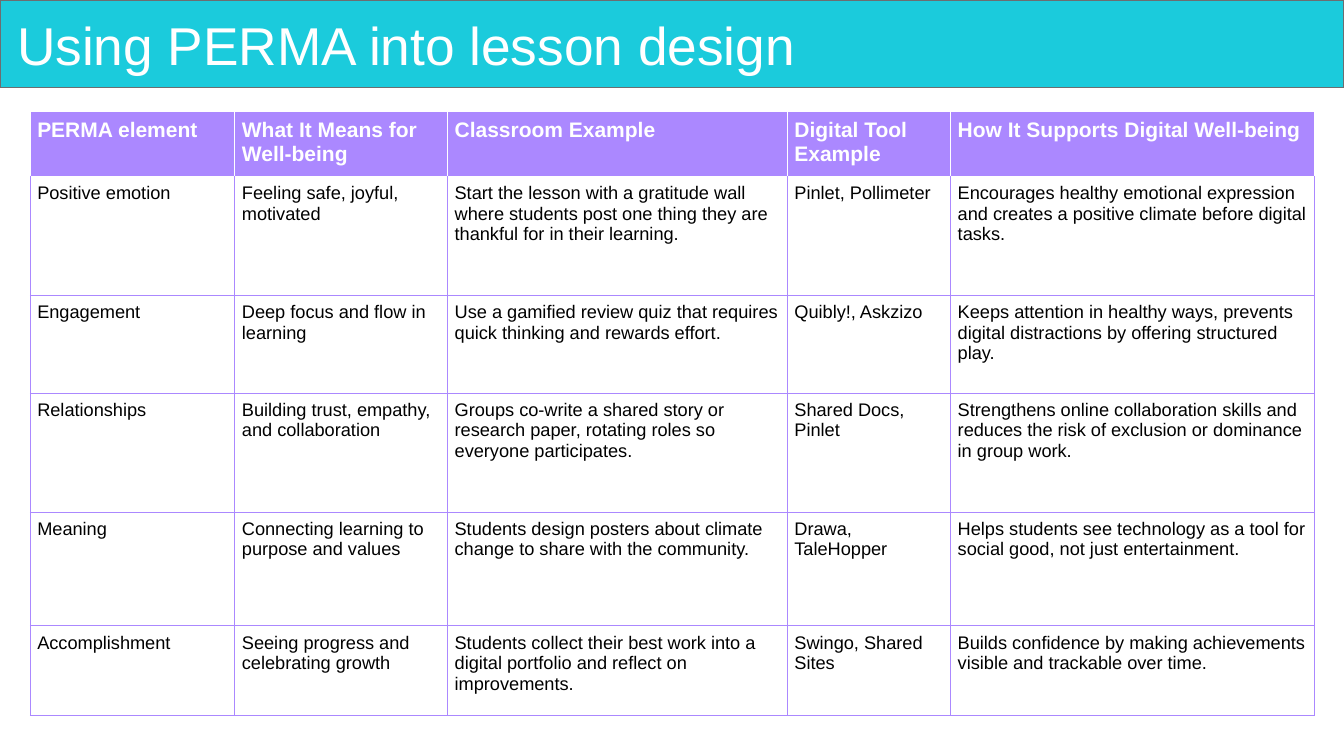
import lxml.etree
import pptx
import pptx.dml.color
import pptx.enum.shapes
import pptx.enum.text
import pptx.oxml.ns
import pptx.util

Inches = pptx.util.Inches
FONT = "Arial"
TEAL, GREY, PURPLE, WHITE, BLACK = "1BCBDC", "6C6E70", "AB88FF", "FFFFFF", "000000"

COLUMN_WIDTHS = [2.03, 2.11, 3.37, 1.62, 3.61]
ROW_HEIGHTS = [0.51, 1.18, 0.97, 1.18, 1.13, 0.89]
PERMA_ROWS = [
    ["PERMA element", "What It Means for Well-being", "Classroom Example",
     "Digital Tool Example", "How It Supports Digital Well-being"],
    ["Positive emotion", "Feeling safe, joyful, motivated",
     "Start the lesson with a gratitude wall where students post one thing "
     "they are thankful for in their learning.",
     "Pinlet, Pollimeter",
     "Encourages healthy emotional expression and creates a positive climate "
     "before digital tasks."],
    ["Engagement", "Deep focus and flow in learning",
     "Use a gamified review quiz that requires quick thinking and rewards effort.",
     "Quibly!, Askzizo",
     "Keeps attention in healthy ways, prevents digital distractions by "
     "offering structured play."],
    ["Relationships", "Building trust, empathy, and collaboration",
     "Groups co-write a shared story or research paper, rotating roles so "
     "everyone participates.",
     "Shared Docs, Pinlet",
     "Strengthens online collaboration skills and reduces the risk of "
     "exclusion or dominance in group work."],
    ["Meaning", "Connecting learning to purpose and values",
     "Students design posters about climate change to share with the community.",
     "Drawa, TaleHopper",
     "Helps students see technology as a tool for social good, not just "
     "entertainment."],
    ["Accomplishment", "Seeing progress and celebrating growth",
     "Students collect their best work into a digital portfolio and reflect "
     "on improvements.",
     "Swingo, Shared Sites",
     "Builds confidence by making achievements visible and trackable over time."],
]


def rgb(hex_colour):
    return pptx.dml.color.RGBColor.from_string(hex_colour)


def add_run(paragraph, text, size, colour, bold=False):
    run = paragraph.add_run()
    run.text = text
    run.font.name = FONT
    run.font.size = pptx.util.Pt(size)
    run.font.bold = bold
    run.font.color.rgb = rgb(colour)


def set_margins(target, inches):
    """Give a cell or text frame the same margin on all sides."""
    target.margin_left = target.margin_right = Inches(inches)
    target.margin_top = target.margin_bottom = Inches(inches)


def set_borders(cell, **colours):
    """Draw 0.75 pt borders; call before filling, as lines precede the fill."""
    qn = pptx.oxml.ns.qn
    properties = cell._tc.get_or_add_tcPr()
    for side in "LRTB":
        line = lxml.etree.SubElement(properties, qn(f"a:ln{side}"),
                                     w=str(pptx.util.Pt(0.75)))
        solid = lxml.etree.SubElement(line, qn("a:solidFill"))
        lxml.etree.SubElement(solid, qn("a:srgbClr"), val=colours.get(side, PURPLE))


def add_title_band(slide, left, top, width, height):
    band = slide.shapes.add_shape(
        pptx.enum.shapes.MSO_SHAPE.RECTANGLE,
        Inches(left), Inches(top), Inches(width), Inches(height))
    band.shadow.inherit = False
    band.fill.solid()
    band.fill.fore_color.rgb = rgb(TEAL)
    band.line.color.rgb = rgb(GREY)
    band.line.width = pptx.util.Pt(1)

    title = slide.shapes.add_textbox(
        Inches(left + 0.11), Inches(top + 0.09),
        Inches(width - 0.27), Inches(height - 0.09)).text_frame
    title.word_wrap = True
    title.vertical_anchor = pptx.enum.text.MSO_ANCHOR.MIDDLE
    set_margins(title, 0.06)
    title.paragraphs[0].line_spacing = 0.9
    add_run(title.paragraphs[0], "Using PERMA into lesson design", 38, WHITE)


def fill_header_cell(cell, text):
    set_borders(cell, L=WHITE, R=WHITE, T=WHITE, B=WHITE)
    cell.fill.solid()
    cell.fill.fore_color.rgb = rgb(PURPLE)
    add_run(cell.text_frame.paragraphs[0], text, 15, WHITE, bold=True)


def fill_body_cell(cell, text, below_header):
    set_borders(cell, T=WHITE if below_header else PURPLE)
    cell.fill.background()
    add_run(cell.text_frame.paragraphs[0], text, 13, BLACK)


def add_perma_table(slide, left, top):
    table = slide.shapes.add_table(
        len(ROW_HEIGHTS), len(COLUMN_WIDTHS), Inches(left), Inches(top),
        Inches(sum(COLUMN_WIDTHS)), Inches(sum(ROW_HEIGHTS))).table
    table.horz_banding = False
    for column, width in zip(table.columns, COLUMN_WIDTHS):
        column.width = Inches(width)
    for row, height in zip(table.rows, ROW_HEIGHTS):
        row.height = Inches(height)
    for row_index, texts in enumerate(PERMA_ROWS):
        for column_index, text in enumerate(texts):
            cell = table.cell(row_index, column_index)
            set_margins(cell, 0.07)
            if row_index == 0:
                fill_header_cell(cell, text)
            else:
                fill_body_cell(cell, text, below_header=row_index == 1)


def main():
    presentation = pptx.Presentation()
    presentation.slide_width = Inches(13.33)
    presentation.slide_height = Inches(7.5)
    slide = presentation.slides.add_slide(presentation.slide_layouts[6])
    add_title_band(slide, 0, 0, 13.33, 0.87)
    add_perma_table(slide, 0.3, 1.11)
    presentation.save("out.pptx")


if __name__ == "__main__":
    main()
